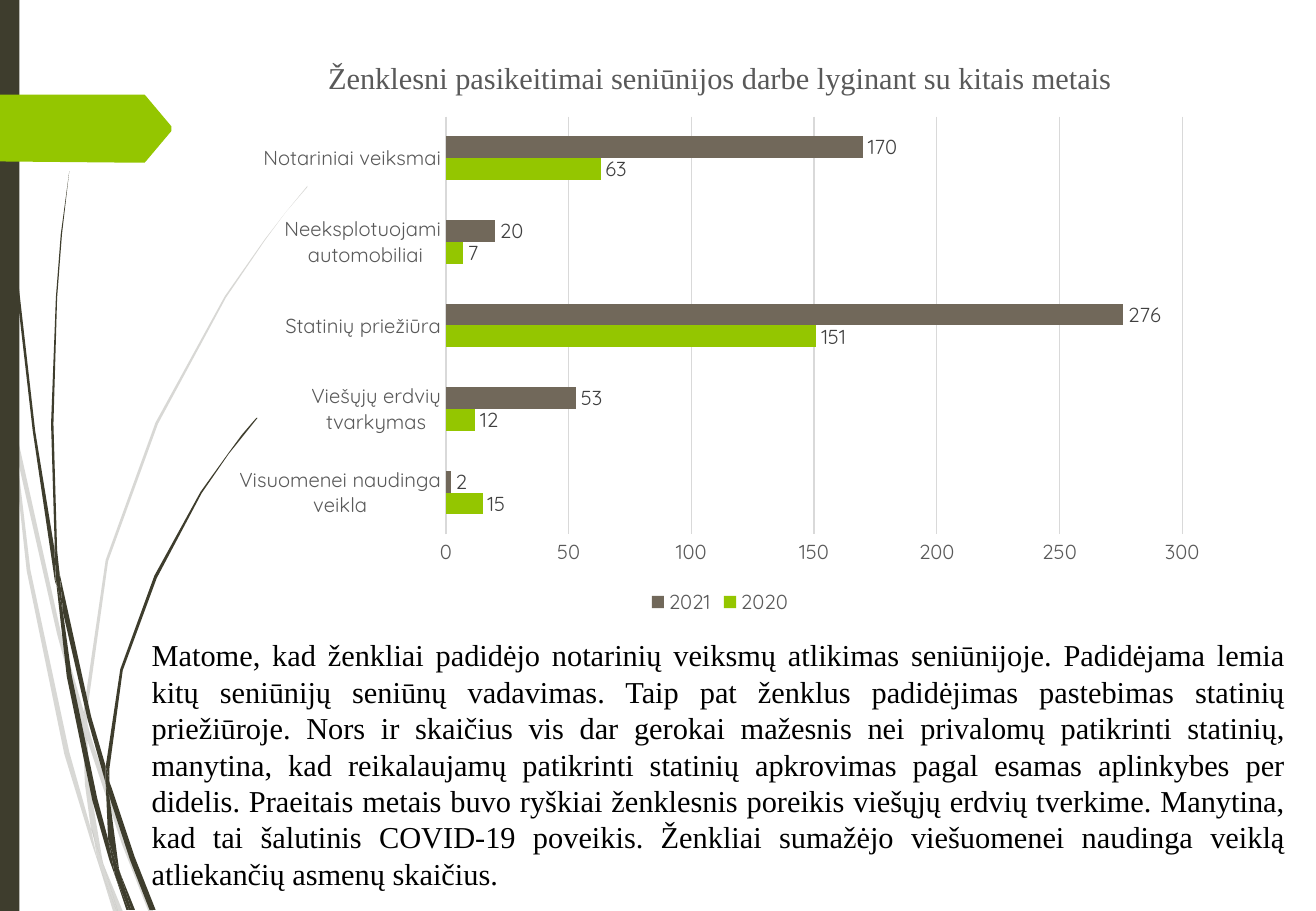
import lxml.etree
import pptx
import pptx.chart.data
import pptx.dml.color
import pptx.enum.chart
import pptx.enum.shapes
import pptx.enum.text
import pptx.oxml
import pptx.oxml.ns
import pptx.util

RGBColor = pptx.dml.color.RGBColor
Inches, Pt = pptx.util.Inches, pptx.util.Pt

DARK = RGBColor(0x3E, 0x3D, 0x2D)
GREEN = RGBColor(0x94, 0xC6, 0x00)
BROWN = RGBColor(0x71, 0x68, 0x5A)
GREY = RGBColor(0x59, 0x59, 0x59)
LABEL = RGBColor(0x40, 0x40, 0x40)
GRID = RGBColor(0xD9, 0xD9, 0xD9)
BLACK = RGBColor(0, 0, 0)
SERIF, SANS = "Times New Roman", "Quicksand"

WIDTH, HEIGHT = 10.83, 7.5
CHART_WIDTH, CHART_HEIGHT = 8.23, 4.81

CHART_TITLE = "Ženklesni pasikeitimai seniūnijos darbe lyginant su kitais metais"
CATEGORIES = [
    "Visuomenei naudinga\nveikla",
    "Viešųjų erdvių\ntvarkymas",
    "Statinių priežiūra",
    "Neeksplotuojami\n automobiliai",
    "Notariniai veiksmai",
]
SERIES = [
    ("2020", [15, 12, 151, 7, 63], GREEN),
    ("2021", [2, 53, 276, 20, 170], BROWN),
]
COMMENT = (
    "Matome, kad ženkliai padidėjo notarinių veiksmų atlikimas seniūnijoje. "
    "Padidėjama lemia kitų seniūnijų seniūnų vadavimas. Taip pat ženklus "
    "padidėjimas pastebimas statinių priežiūroje. Nors ir skaičius vis dar "
    "gerokai mažesnis nei privalomų patikrinti statinių, manytina, kad "
    "reikalaujamų patikrinti statinių apkrovimas pagal esamas aplinkybes per "
    "didelis. Praeitais metais buvo ryškiai ženklesnis poreikis viešųjų erdvių "
    "tverkime. Manytina, kad tai šalutinis COVID-19 poveikis. Ženkliai sumažėjo "
    "viešuomenei naudinga veiklą atliekančių asmenų skaičius."
)

# Outlines of the pieces of grass, in inches
PALE_GRASS = [
    [(0.09, 3.5), (0.07, 3.22), (0, 2.82), (0, 2.99), (0.08, 3.44)],
    [(0.47, 5.22), (0.68, 5.99), (0.69, 5.86), (0.5, 5.2), (0.11, 3.45), (0.14, 3.76)],
    [(0.75, 6.07), (0.72, 5.96), (0.72, 6.1), (1, 6.94), (1.22, 7.5), (1.26, 7.5),
     (1.03, 6.92)],
    [(0.97, 7.5), (1.01, 7.5), (0.85, 7.11)],
    [(0.75, 6.83), (0.57, 6.19), (0.25, 4.69), (0.14, 3.76), (0.09, 3.5), (0.22, 4.7),
     (0.53, 6.21), (0.75, 6.93), (0.82, 7.14), (0.8, 7.07)],
    [(0.68, 5.99), (0.7, 6.46), (0.75, 6.83), (0.78, 6.92), (0.85, 7.11), (0.84, 7.06),
     (0.74, 6.46), (0.72, 6.1), (0.71, 6.08)],
    [(0.72, 5.84), (0.89, 4.62), (1.3, 3.49), (1.86, 2.45), (2.18, 1.98), (2.35, 1.75),
     (2.53, 1.54), (2.53, 1.53), (2.35, 1.75), (2.18, 1.97), (1.85, 2.44), (1.28, 3.48),
     (0.87, 4.61), (0.69, 5.84), (0.69, 5.86), (0.72, 5.96)],
    [(0.82, 7.14), (0.93, 7.5), (0.96, 7.5)],
    [(0.71, 6.08), (0.72, 6.1), (0.72, 5.96), (0.69, 5.86), (0.68, 5.99)],
    [(0.78, 6.92), (0.76, 6.83), (0.8, 7.07), (0.82, 7.14), (0.96, 7.5), (0.97, 7.5),
     (0.85, 7.11)],
]
DARK_GRASS = [
    [(0.05, 1.1), (0.13, 2.33), (0.27, 3.55), (0.45, 4.77), (0.46, 4.81), (0.45, 4.57),
     (0.45, 4.53), (0.29, 3.55), (0.15, 2.32), (0.06, 1.09), (0.04, 0.48), (0.03, 0),
     (0.02, 0), (0.03, 0.48)],
    [(0.72, 5.92), (0.87, 6.45), (0.87, 6.31), (0.75, 5.9), (0.49, 4.72), (0.52, 5.05)],
    [(0.92, 6.49), (0.89, 6.41), (0.9, 6.56), (1.07, 7.08), (1.23, 7.49), (1.28, 7.49),
     (1.11, 7.06)],
    [(0.89, 6.91), (0.8, 6.57), (0.59, 5.56), (0.52, 5.05), (0.46, 4.77), (0.55, 5.57),
     (0.76, 6.59), (0.9, 7.08), (0.95, 7.22), (0.94, 7.17)],
    [(0.49, 4.72), (0.47, 4.53), (0.44, 3.49), (0.47, 2.45), (0.51, 1.93), (0.57, 1.41),
     (0.5, 1.93), (0.46, 2.45), (0.42, 3.49), (0.45, 4.49), (0.48, 4.72)],
    [(1.08, 7.49), (1.11, 7.49), (0.99, 7.19)],
    [(0.46, 4.77), (0.52, 5.05), (0.49, 4.72), (0.45, 4.49), (0.45, 4.53)],
    [(0.9, 6.33), (1.01, 5.52), (1.29, 4.76), (1.66, 4.06), (1.88, 3.74), (2, 3.59),
     (2.12, 3.44), (2.11, 3.44), (1.99, 3.58), (1.88, 3.73), (1.65, 4.05), (1.27, 4.74),
     (0.99, 5.51), (0.87, 6.31), (0.9, 6.41)],
    [(0.95, 7.22), (1.04, 7.49), (1.06, 7.49)],
    [(0.87, 6.45), (0.89, 6.91), (0.94, 7.06), (0.99, 7.19), (0.98, 7.16), (0.9, 6.56),
     (0.88, 6.51)],
    [(0.87, 6.45), (0.88, 6.51), (0.9, 6.56), (0.9, 6.41), (0.87, 6.31)],
    [(0.94, 7.06), (0.89, 6.91), (0.94, 7.17), (0.95, 7.22), (1.06, 7.49), (1.08, 7.49),
     (0.99, 7.19)],
]
TAG = [(0, 0.78), (1.19, 0.78), (1.2, 0.79), (1.41, 1.04), (1.41, 1.08),
       (1.2, 1.33), (1.19, 1.34), (1.11, 1.34), (0, 1.33)]


def paint(shape, color, opacity=100):
    shape.shadow.inherit = False
    shape.fill.solid()
    shape.fill.fore_color.rgb = color
    shape.line.fill.background()
    if opacity < 100:
        qn = pptx.oxml.ns.qn
        tint = shape.element.spPr.find(qn("a:solidFill")).find(qn("a:srgbClr"))
        lxml.etree.SubElement(tint, qn("a:alpha")).set("val", str(opacity * 1000))


def add_outline(shapes, outline, color, opacity=100):
    units = [(round(x * 100), round(y * 100)) for x, y in outline]
    builder = shapes.build_freeform(*units[0], scale=Inches(0.01))
    builder.add_line_segments(units[1:], close=True)
    paint(builder.convert_to_shape(), color, opacity)


def set_font(font, name, size, color):
    font.name, font.size, font.bold = name, Pt(size), False
    font.color.rgb = color


def place_plot(chart, **shares):
    """Fix the inner plot area as shares of the chart frame."""
    plot_area = chart.element.chart.plotArea
    for old in plot_area.findall(pptx.oxml.ns.qn("c:layout")):
        plot_area.remove(old)
    modes = "".join(f'<c:{m} val="edge"/>' for m in ("xMode", "yMode"))
    sizes = "".join(f'<c:{k} val="{v}"/>' for k, v in shares.items())
    plot_area.insert(0, pptx.oxml.parse_xml(
        f'<c:layout {pptx.oxml.ns.nsdecls("c")}><c:manualLayout>'
        f'<c:layoutTarget val="inner"/>{modes}{sizes}'
        '</c:manualLayout></c:layout>'))


def add_bar_chart(page):
    data = pptx.chart.data.CategoryChartData()
    data.categories = CATEGORIES
    for name, values, _ in SERIES:
        data.add_series(name, values)
    chart = page.shapes.add_chart(
        pptx.enum.chart.XL_CHART_TYPE.BAR_CLUSTERED, Inches(1.81), Inches(0.29),
        Inches(CHART_WIDTH), Inches(CHART_HEIGHT), data).chart
    set_font(chart.font, SANS, 10, BLACK)
    place_plot(chart, x=1.86 / CHART_WIDTH, y=0.67 / CHART_HEIGHT,
               w=6.06 / CHART_WIDTH, h=3.44 / CHART_HEIGHT)

    chart.has_title = True
    span = chart.chart_title.text_frame.paragraphs[0].add_run()
    span.text = CHART_TITLE
    set_font(span.font, SERIF, 18, GREY)
    chart.chart_title.include_in_layout = False

    chart.has_legend = True
    chart.legend.position = pptx.enum.chart.XL_LEGEND_POSITION.BOTTOM
    chart.legend.include_in_layout = False
    set_font(chart.legend.font, SANS, 12, GREY)

    for axis in (chart.category_axis, chart.value_axis):
        axis.major_tick_mark = pptx.enum.chart.XL_TICK_MARK.NONE
        axis.minor_tick_mark = pptx.enum.chart.XL_TICK_MARK.NONE
        set_font(axis.tick_labels.font, SANS, 12, GREY)
    chart.value_axis.format.line.fill.background()
    chart.value_axis.has_major_gridlines = True
    grid = chart.value_axis.major_gridlines
    for line in (chart.category_axis.format.line, grid.format.line):
        line.color.rgb, line.width = GRID, Pt(0.75)

    plot = chart.plots[0]
    plot.gap_width, plot.overlap, plot.vary_by_categories = 182, 0, False
    for series, (_, _, color) in zip(plot.series, SERIES):
        series.format.fill.solid()
        series.format.fill.fore_color.rgb = color
        series.data_labels.show_value = True
        series.data_labels.position = pptx.enum.chart.XL_LABEL_POSITION.OUTSIDE_END
        set_font(series.data_labels.font, SANS, 12, LABEL)


def add_comment(page):
    box = page.shapes.add_textbox(Inches(1.15), Inches(5.19), Inches(9.53), Inches(2.22))
    box.text_frame.word_wrap = True
    para = box.text_frame.paragraphs[0]
    para.alignment = pptx.enum.text.PP_ALIGN.JUSTIFY
    span = para.add_run()
    span.text = COMMENT
    set_font(span.font, SERIF, 18, BLACK)


def main():
    deck = pptx.Presentation()
    deck.slide_width, deck.slide_height = Inches(WIDTH), Inches(HEIGHT)
    page = deck.slides.add_slide(deck.slide_layouts[6])
    for grass, opacity in ((PALE_GRASS, 20), (DARK_GRASS, 100)):
        group = page.shapes.add_group_shape()
        for outline in grass:
            add_outline(group.shapes, outline, DARK, opacity)
    side_bar = page.shapes.add_shape(
        pptx.enum.shapes.MSO_SHAPE.RECTANGLE, 0, 0, Inches(0.16), Inches(HEIGHT))
    paint(side_bar, DARK)
    add_outline(page.shapes, TAG, GREEN)
    add_bar_chart(page)
    add_comment(page)
    deck.save("out.pptx")


if __name__ == "__main__":
    main()
